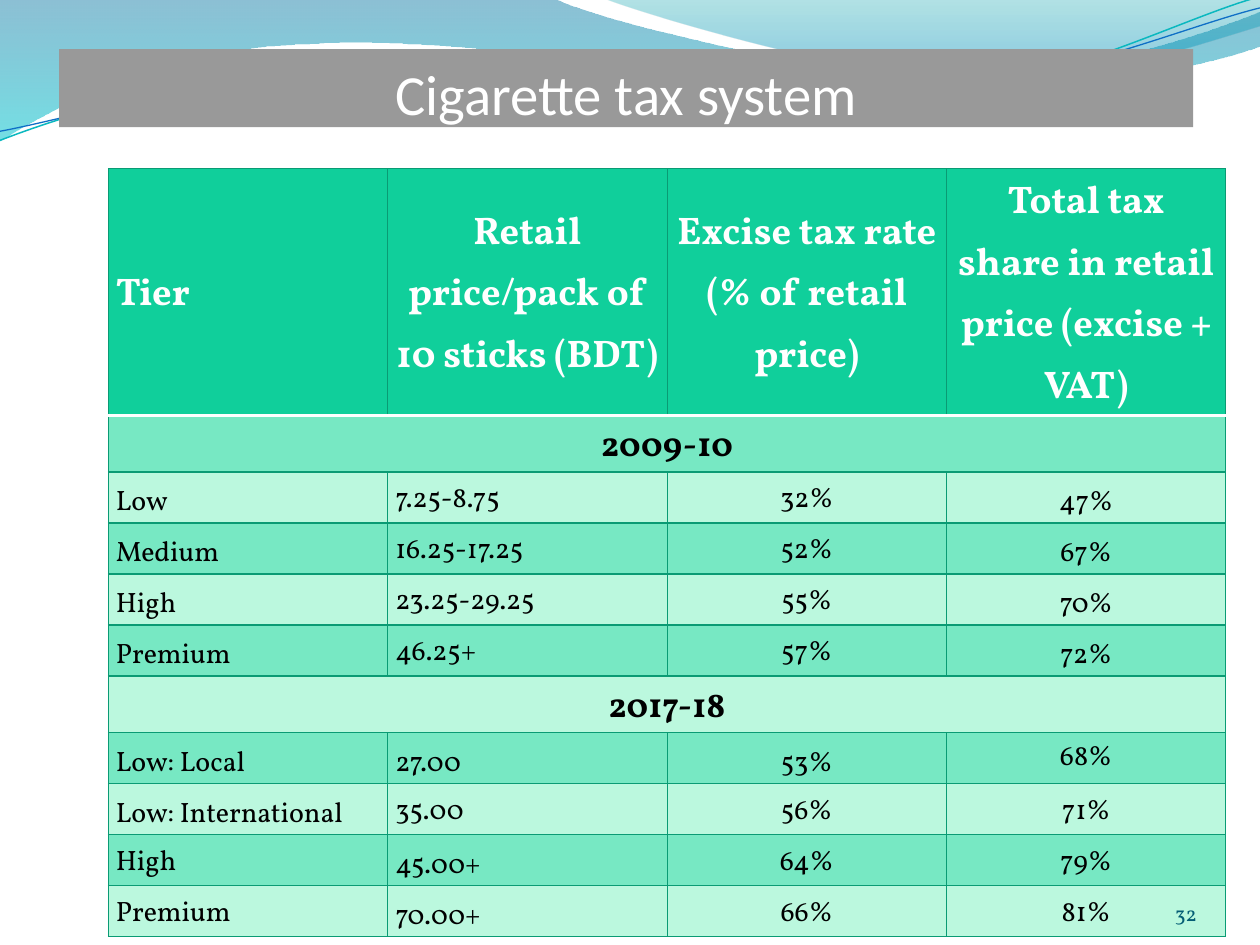
from lxml import etree
from pptx import Presentation
from pptx import util as u
from pptx.dml.color import RGBColor
from pptx.enum import text
from pptx.oxml import ns

W, H = 10, 7.5
COLS, ROWS = 100, 75  # layout grid
SCALE = 9525
C = {"white": "FFFFFF", "black": "000000", "bar": "999999", "head": "10CF9B",
     "dark": "77E8C3", "light": "BBF8DE", "border": "0A9B74", "number": "045D75",
     "sea": "0074A1", "aqua": "00C6CF", "teal": "00A1A9", "sky": "008BBF",
     "cyan": "0AB8BF", "blue": "0F6FC6"}
FONT = "Vollkorn"
LEFT, MID, RIGHT = text.PP_ALIGN.LEFT, text.PP_ALIGN.CENTER, text.PP_ALIGN.RIGHT
ANCHOR = {"t": text.MSO_ANCHOR.TOP, "m": text.MSO_ANCHOR.MIDDLE, "b": text.MSO_ANCHOR.BOTTOM}

# Waves: start point, then segments of one point (line) or three (curve)
BANDS = [
    ([[(0, 0)], [(4.4, -.01)], [(4.76, .17), (6.64, .63), (7.58, .63)],
      [(8.53, .63), (9.58, .26), (10, .09)], [(10.01, .36)],
      [(9.83, .44), (8.7, .76), (7.46, .75)], [(6.22, .75), (3.82, .28), (2.57, .34)],
      [(1.29, .36), (.46, .83), (-.01, 1.13)], [(0, 0)]],
     [(0, "sea", 45), (1, "aqua", 55)]),
    ([[(4.79, -.01)], [(5.09, .11), (6.82, .62), (7.69, .65)],
      [(8.56, .69), (9.61, .32), (10, .21)], [(10, 0)], [(4.79, -.01)]],
     [(0, "teal", 30), (.8, "sky", 45)]),
]
STROKES = [
    ([[(0, 1.11)], [(.48, .93), (1.58, .57), (2.77, .52)], [(3.95, .47), (5.93, .89), (7.13, .8)],
      [(8.33, .71), (9.38, .15), (9.98, -.02)]], "cyan", .85),
    ([[(0, 1.04)], [(.47, .96), (1.64, .61), (2.83, .56)], [(4.03, .51), (5.97, .84), (7.17, .75)],
      [(8.36, .67), (9.41, .21), (10, .06)]], "blue", .75),
]

HEADER = ["Tier", "Retail price/pack of 10 sticks (BDT)", "Excise tax rate (% of retail price)",
          "Total tax share in retail price (excise + VAT)"]
# Each row: vertical anchors, then cell texts; a single text spans the row
TAXES = [
    ("mmmb", *HEADER),
    ("b", "2009-10"),
    ("bmmb", "Low", "7.25-8.75", "32%", "47%"),
    ("bmmb", "Medium", "16.25-17.25", "52%", "67%"),
    ("bmmb", "High", "23.25-29.25", "55%", "70%"),
    ("bmmb", "Premium", "46.25+", "57%", "72%"),
    ("b", "2017-18"),
    ("bbbt", "Low: Local", "27.00", "53%", "68%"),
    ("bmmm", "Low: International", "35.00", "56%", "71%"),
    ("mbmm", "High", "45.00+", "64%", "79%"),
    ("mbmm", "Premium", "70.00+", "66%", "81%"),
]


def rgb(name):
    return RGBColor.from_string(C[name])


def grid(col, row, cols, rows):
    """Left, top, width and height of a box given in grid columns and rows."""
    x, y = u.Inches(W) / COLS, u.Inches(H) / ROWS
    return [round(v) for v in (col * x, row * y, cols * x, rows * y)]


def style(p, size, color, align, font=FONT, bold=False):
    p.alignment = align
    f = p.font
    f.size, f.name, f.bold = u.Pt(size), font, bold
    f.color.rgb = rgb(color)


def add_wave(s, outline, close):
    points = [(x * u.Inches(1) / SCALE, y * u.Inches(1) / SCALE) for seg in outline for x, y in seg]
    fb = s.shapes.build_freeform(*points[0], scale=SCALE)
    fb.add_line_segments(points[1:], close=close)
    sp = fb.convert_to_shape()
    sp.shadow.inherit = False
    # Join the three steps of each curve into one Bezier segment
    steps = iter(list(sp._element.iter(ns.qn("a:lnTo"))))
    for seg in outline[1:]:
        group = [next(steps) for _ in seg]
        if len(group) == 3:
            curve = etree.Element(ns.qn("a:cubicBezTo"))
            group[0].addprevious(curve)
            for step in group:
                curve.append(step[0])
                step.getparent().remove(step)
    s.shapes.title._element.addprevious(sp._element)  # keep the waves behind the title
    return sp


def add_waves(s):
    for outline, stops in BANDS:
        sp = add_wave(s, outline, True)
        sp.line.fill.background()
        sp.fill.gradient()
        sp.fill.gradient_angle = 270
        for stop, (pos, color, _) in zip(sp.fill.gradient_stops, stops):
            stop.position, stop.color.rgb = pos, rgb(color)
        for clr, (_, _, alpha) in zip(sp._element.spPr.iter(ns.qn("a:srgbClr")), stops):
            etree.SubElement(clr, ns.qn("a:alpha"), val=str(alpha * 1000))
    for outline, color, width in STROKES:
        sp = add_wave(s, outline, False)
        sp.fill.background()
        sp.line.color.rgb, sp.line.width = rgb(color), u.Pt(width)


def add_title(s, box):
    sp = s.shapes.title
    sp.left, sp.top, sp.width, sp.height = box
    sp.fill.solid()
    sp.fill.fore_color.rgb = rgb("bar")
    tf = sp.text_frame
    tf.text = "Cigarette tax system"
    tf.auto_size, tf.vertical_anchor = text.MSO_AUTO_SIZE.NONE, ANCHOR["b"]
    tf.margin_left = tf.margin_right = tf.margin_bottom = 0
    tf.margin_top = u.Inches(.05)
    style(tf.paragraphs[0], 32.4, "white", MID, "Calibri")


def set_borders(cell, row):
    white = {0: "B", 1: "T"}.get(row)  # rule below the header
    tcPr = cell._tc.get_or_add_tcPr()
    for i, side in enumerate("LRTB"):
        color, width = ("white", 2) if side == white else ("border", .75)
        ln = etree.Element(ns.qn(f"a:ln{side}"), w=str(u.Pt(width)))
        fill = etree.SubElement(ln, ns.qn("a:solidFill"))
        etree.SubElement(fill, ns.qn("a:srgbClr"), val=C[color])
        tcPr.insert(i, ln)


def add_tax_table(s, box):
    n = len(HEADER)
    table = s.shapes.add_table(len(TAXES), n, *box).table
    for col in table.columns:
        col.width = round(box[2] / n)
    head_h, period_h = u.Inches(1.95), u.Inches(.45)
    periods = sum(len(row) == 2 for row in TAXES)
    tier_h = (box[3] - head_h - periods * period_h) // (len(TAXES) - 1 - periods)
    for r, (anchors, *texts) in enumerate(TAXES):
        head, period = r == 0, len(texts) == 1
        table.rows[r].height = head_h if head else period_h if period else tier_h
        if period:
            table.cell(r, 0).merge(table.cell(r, n - 1))
        for c in range(n):
            cell = table.cell(r, c)
            cell.fill.solid()
            cell.fill.fore_color.rgb = rgb("head" if head else "dark" if r % 2 else "light")
            set_borders(cell, r)
            if c >= len(texts):
                continue
            cell.text = texts[c]
            cell.vertical_anchor = ANCHOR[anchors[c]]
            cell.margin_left = cell.margin_right = u.Inches(.06)
            cell.margin_top = cell.margin_bottom = 0
            p = cell.text_frame.paragraphs[0]
            p.line_spacing = 1.15
            centred = period or c > 1 or (head and c)
            style(p, 22 if head else 20 if period else 16, "white" if head else "black",
                  MID if centred else LEFT, bold=head or period)


def add_page_number(s, box):
    tf = s.shapes.add_textbox(*box).text_frame
    tf.text, tf.word_wrap, tf.vertical_anchor = "32", True, ANCHOR["b"]
    tf.margin_left = tf.margin_right = tf.margin_top = tf.margin_bottom = 0
    style(tf.paragraphs[0], 12, "number", RIGHT)


def main():
    prs = Presentation()
    prs.slide_width, prs.slide_height = u.Inches(W), u.Inches(H)
    s = prs.slides.add_slide(prs.slide_layouts[5])
    add_waves(s)
    add_title(s, grid(4.7, 3.9, 90, 6.2))
    add_tax_table(s, grid(8.6, 13.4, 88.7, 60.9))
    add_page_number(s, grid(86.7, 69.5, 8.3, 4))
    prs.save("out.pptx")


if __name__ == "__main__":
    main()
